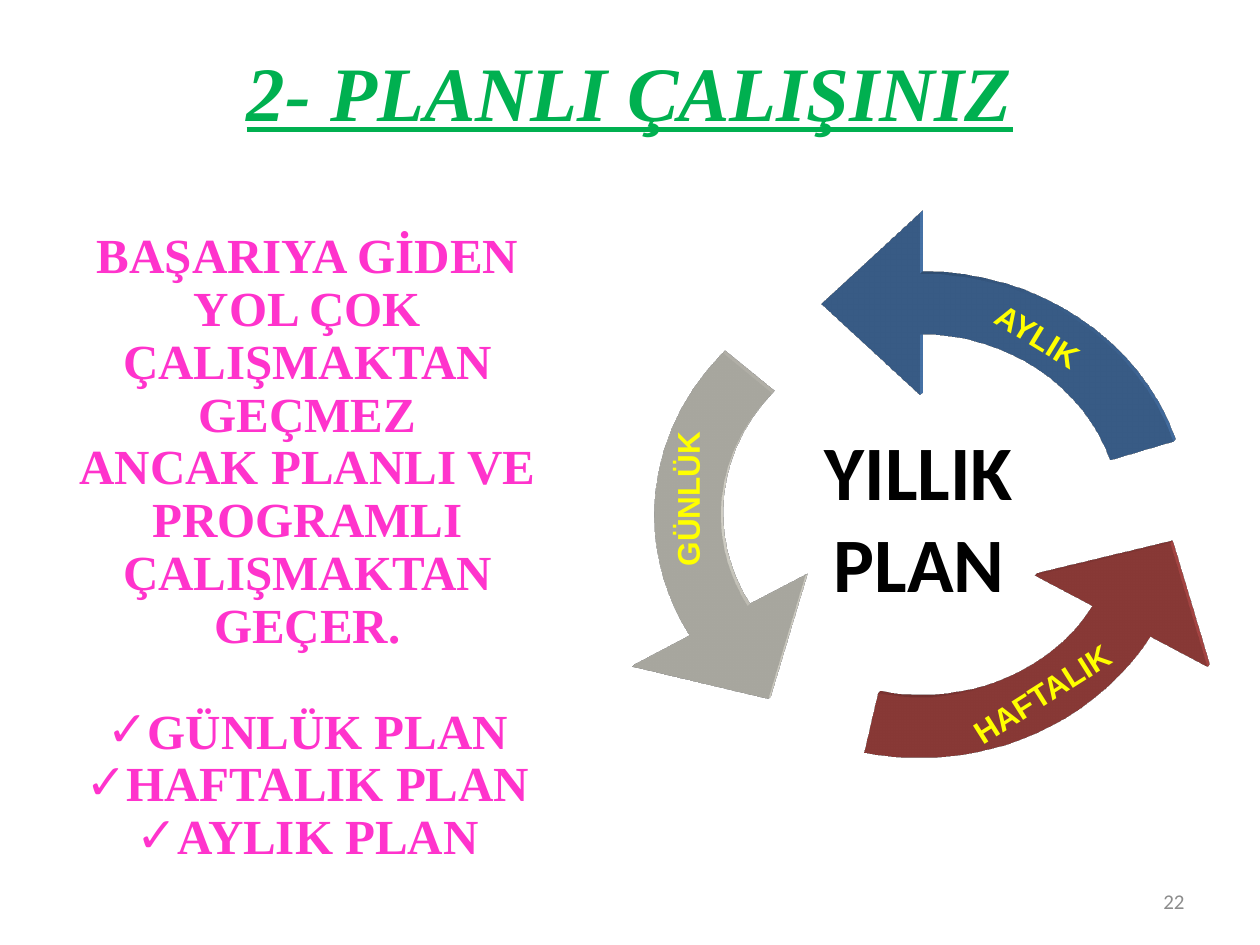
from dataclasses import dataclass
from math import cos, radians, sin, tan

from lxml.etree import SubElement
from pptx import Presentation
from pptx.dml.color import RGBColor
from pptx.enum.text import MSO_ANCHOR, MSO_AUTO_SIZE, PP_ALIGN
from pptx.oxml.ns import qn
from pptx.util import Inches, Pt

COLORS = {
    "title": "00B050", "body": "FF33CC", "label": "FFFF00",
    "center": "000000", "number": "8C8C8C",
    "blue": "4F81BD", "red": "C0504D", "gray": "EEECE1",
}

# Ring that the three arrows follow, in inches
FRAME = (5.19, 2.18, 4.21, 3.83)
CENTER_X, CENTER_Y = 7.3, 4.09
RADIUS_X, RADIUS_Y = 2.11, 1.92
INNER = 0.75
SWEEP = 72

Point = tuple[float, float]


@dataclass
class CycleArrow:
    start: int
    color: str
    label: str
    box: tuple[float, float, float, float]
    rotation: float


@dataclass
class TextStyle:
    font: str
    size: float
    color: str
    bold: bool = True
    align: PP_ALIGN = PP_ALIGN.CENTER


ARROWS = [
    CycleArrow(18, "blue", "AYLIK", (7.79, 2.37, 0.95, 0.5), 31.4),
    CycleArrow(258, "red", "HAFTALIK", (7.52, 5.21, 1.44, 0.5), 327.6),
    CycleArrow(138, "gray", "GÜNLÜK", (4.77, 3.71, 1.27, 0.5), 270),
]
SENTENCES = [
    "BAŞARIYA GİDEN YOL ÇOK ÇALIŞMAKTAN GEÇMEZ",
    "ANCAK PLANLI VE PROGRAMLI ÇALIŞMAKTAN GEÇER.",
]
PLANS = ["GÜNLÜK PLAN", "HAFTALIK PLAN", "AYLIK PLAN"]


def color_of(name: str) -> RGBColor:
    return RGBColor.from_string(COLORS[name])


def place(shape, box: tuple[float, float, float, float]) -> None:
    shape.left, shape.top, shape.width, shape.height = map(Inches, box)


def format_paragraph(paragraph, style: TextStyle) -> None:
    paragraph.alignment = style.align
    font = paragraph.font
    font.name, font.size, font.bold = style.font, Pt(style.size), style.bold
    font.color.rgb = color_of(style.color)


def write_text(shape, text: str, style: TextStyle, wrap: bool = False) -> None:
    frame = shape.text_frame
    frame.text = text
    frame.word_wrap = wrap
    frame.vertical_anchor = MSO_ANCHOR.MIDDLE
    for paragraph in frame.paragraphs:
        format_paragraph(paragraph, style)


def ring_point(angle: float, scale: float, pull: float = 0) -> Point:
    """Point on the ring, moved along the tangent by pull."""
    turn = radians(angle)
    x = cos(turn) - pull * sin(turn)
    y = sin(turn) + pull * cos(turn)
    return CENTER_X + RADIUS_X * scale * x, CENTER_Y - RADIUS_Y * scale * y


def arc_curves(start: int, end: int, scale: float) -> list[tuple[str, list[Point]]]:
    """Cubic curves from start to end, split at the axes of the ring."""
    splits = [angle for angle in (90, 180, 270) if min(start, end) < angle < max(start, end)]
    stops = sorted([start, *splits, end], reverse=start > end)
    curves = []
    for first, last in zip(stops, stops[1:]):
        pull = 4 / 3 * tan(radians(last - first) / 4)
        curves.append(("cubicBezTo", [ring_point(first, scale, pull),
                                      ring_point(last, scale, -pull),
                                      ring_point(last, scale)]))
    return curves


def arrow_outline(start: int) -> list[tuple[str, list[Point]]]:
    end = start + SWEEP
    head = [ring_point(end, 1.25), ring_point(end + 23, 0.95),
            ring_point(end, 0.5), ring_point(end, INNER)]
    return [("moveTo", [ring_point(end, INNER)]),
            *arc_curves(end, start, INNER),
            ("lnTo", [ring_point(start, 1)]),
            *arc_curves(start, end, 1),
            *(("lnTo", [point]) for point in head),
            ("close", [])]


def set_outline(shape, outline: list[tuple[str, list[Point]]]) -> None:
    path = shape._element.spPr.find(".//" + qn("a:path"))
    for command in list(path):
        path.remove(command)
    for name, points in outline:
        command = SubElement(path, qn(f"a:{name}"))
        for x, y in points:
            SubElement(command, qn("a:pt"), x=str(Inches(x - FRAME[0])),
                       y=str(Inches(y - FRAME[1])))


def extrude(shape, color: str) -> None:
    properties = shape._element.spPr
    scene = SubElement(properties, qn("a:scene3d"))
    SubElement(scene, qn("a:camera"), prst="legacyObliqueTopRight")
    SubElement(scene, qn("a:lightRig"), rig="legacyFlat3", dir="b")
    solid = SubElement(properties, qn("a:sp3d"), extrusionH="49200",
                       prstMaterial="legacyMatte")
    for bevel in ("a:bevelT", "a:bevelB"):
        SubElement(solid, qn(bevel), w="13500", h="13500", prst="angle")
    side = SubElement(solid, qn("a:extrusionClr"))
    SubElement(side, qn("a:srgbClr"), val=COLORS[color])


def add_arrow(group, arrow: CycleArrow):
    left, top, width, height = map(Inches, FRAME)
    builder = group.shapes.build_freeform(left, top)
    builder.add_line_segments([(left + width, top), (left + width, top + height),
                               (left, top + height)])
    shape = builder.convert_to_shape()
    set_outline(shape, arrow_outline(arrow.start))
    shape.fill.solid()
    shape.fill.fore_color.rgb = color_of(arrow.color)
    shape.line.fill.background()
    shape.shadow.inherit = False
    extrude(shape, arrow.color)
    return shape


def add_arrow_label(group, arrow: CycleArrow) -> None:
    shape = group.shapes.add_textbox(*map(Inches, arrow.box))
    write_text(shape, arrow.label, TextStyle("Arial", 18, "label"))
    shape.text_frame.margin_top = Inches(0.15)
    shape.rotation = arrow.rotation


def set_bullet(paragraph, character: str = "") -> None:
    properties = paragraph._p.get_or_add_pPr()
    properties.set("marL", "0")
    properties.set("indent", "0")
    if character:
        SubElement(properties, qn("a:buChar")).set("char", character)
    else:
        SubElement(properties, qn("a:buNone"))


def fill_title(title) -> None:
    place(title, (0.5, 0.3, 9, 1.25))
    frame = title.text_frame
    frame.text = "2- PLANLI ÇALIŞINIZ"
    frame.vertical_anchor = MSO_ANCHOR.TOP
    frame.auto_size = MSO_AUTO_SIZE.NONE
    paragraph = frame.paragraphs[0]
    format_paragraph(paragraph, TextStyle("Times New Roman", 44, "title"))
    paragraph.font.italic = paragraph.font.underline = True


def fill_body(body) -> None:
    place(body, (0.43, 1.78, 4.02, 5.14))
    frame = body.text_frame
    frame.text = "\n".join(SENTENCES + PLANS)
    frame.auto_size = MSO_AUTO_SIZE.NONE
    for index, paragraph in enumerate(frame.paragraphs):
        format_paragraph(paragraph, TextStyle("Times New Roman", 28, "body"))
        paragraph.line_spacing = Pt(30.2)
        # One line of space parts the plans from the sentences
        paragraph.space_before = Pt(30.2 if index == len(SENTENCES) else 0)
        set_bullet(paragraph, "✓" if index >= len(SENTENCES) else "")


def main() -> None:
    presentation = Presentation()
    presentation.slide_width, presentation.slide_height = Inches(10), Inches(7.5)
    slide = presentation.slides.add_slide(presentation.slide_layouts[1])

    # Title and list
    fill_title(slide.shapes.title)
    fill_body(slide.placeholders[1])

    # Cycle of arrows; the first one carries the text in the middle
    cycle = slide.shapes.add_group_shape()
    shapes = [add_arrow(cycle, arrow) for arrow in ARROWS]
    write_text(shapes[0], "YILLIK\nPLAN", TextStyle("Calibri", 44, "center"))
    for arrow in ARROWS:
        add_arrow_label(cycle, arrow)

    # Slide number
    number = slide.shapes.add_textbox(*map(Inches, (7.17, 6.95, 2.33, 0.4)))
    write_text(number, "22", TextStyle("Calibri", 12, "number", False, PP_ALIGN.RIGHT), True)

    presentation.save("out.pptx")


if __name__ == "__main__":
    main()
